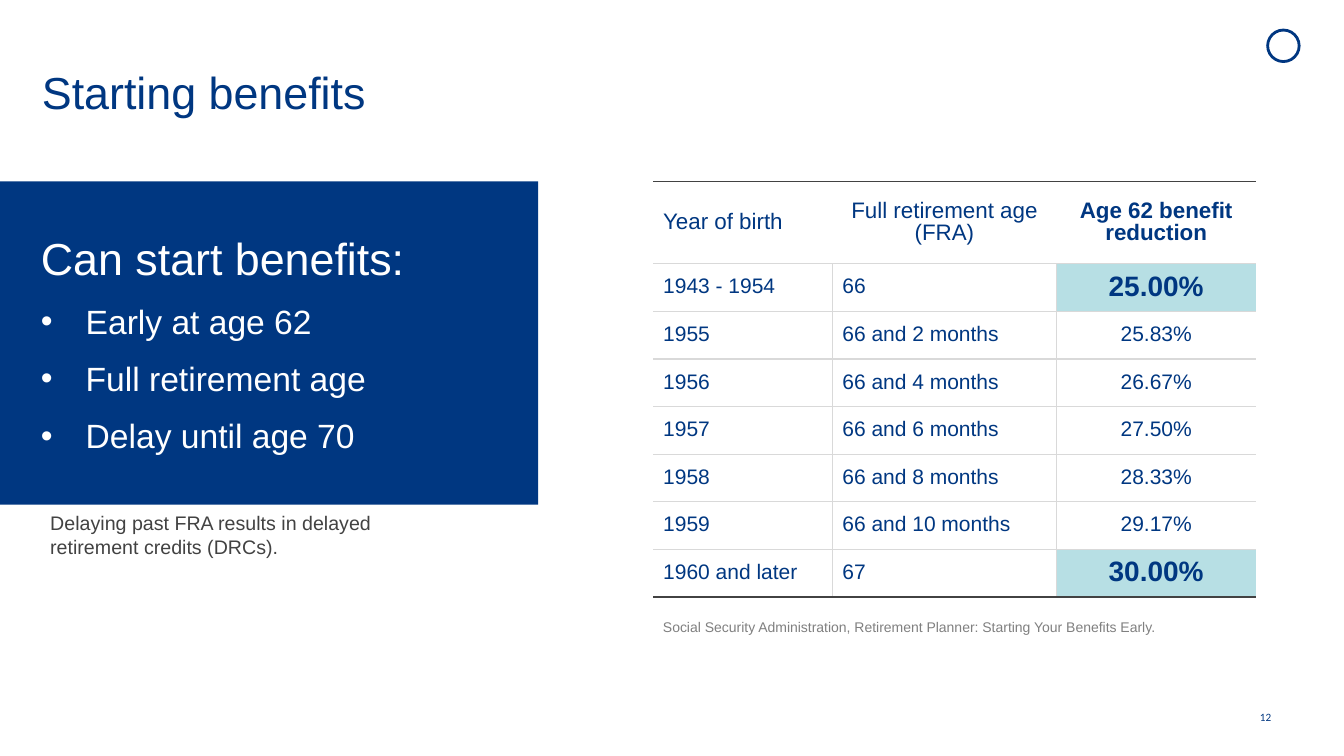
from pptx import Presentation
from pptx.dml.color import RGBColor as Rgb
from pptx.enum.shapes import MSO_SHAPE as Kind
from pptx.enum.text import MSO_ANCHOR as Anchor, MSO_AUTO_SIZE as Auto, PP_ALIGN as Align
from pptx.oxml.ns import qn
from pptx.util import Pt
from lxml.etree import SubElement as Sub

HUES = {"navy": "003781", "teal": "B7DFE4", "white": "FFFFFF",
        "rule": "D9D9D9", "dark": "424242", "gray": "808080"}
ROWS = [
    ("Year of birth", "Full retirement age (FRA)", "Age 62 benefit reduction"),
    ("1943 - 1954", "66", "25.00%"),
    ("1955", "66 and 2 months", "25.83%"),
    ("1956", "66 and 4 months", "26.67%"),
    ("1957", "66 and 6 months", "27.50%"),
    ("1958", "66 and 8 months", "28.33%"),
    ("1959", "66 and 10 months", "29.17%"),
    ("1960 and later", "67", "30.00%"),
]
LAST = len(ROWS) - 1
ITEMS = ["Can start benefits:", "Early at age 62", "Full retirement age", "Delay until age 70"]


class Deck:
    def __init__(self):
        self.prs = Presentation()
        self.prs.slide_width, self.prs.slide_height = Pt(960), Pt(540)
        self.slide = self.prs.slides.add_slide(self.prs.slide_layouts[1])
        self.shapes = self.slide.shapes

    def hue(self, name):
        return Rgb.from_string(HUES[name])

    def style(self, par, size, hue, bold=False, font="Arial"):
        for run in par.runs:
            run.font.size, run.font.bold, run.font.name = Pt(size), bold, font
            run.font.color.rgb = self.hue(hue)

    def place(self, shape, box):
        shape.left, shape.top, shape.width, shape.height = map(Pt, box)

    def inset(self, frame, side, edge):
        frame.margin_left = frame.margin_right = Pt(side)
        frame.margin_top = frame.margin_bottom = Pt(edge)

    def title(self, text, box):
        shape = self.shapes.title
        self.place(shape, box)
        frame = shape.text_frame
        frame.text = text
        frame.auto_size, frame.vertical_anchor = Auto.NONE, Anchor.BOTTOM
        self.inset(frame, 0, 0)
        par = frame.paragraphs[0]
        par.alignment, par.line_spacing = Align.LEFT, 0.9
        self.style(par, 32, "navy")

    def panel(self, items, box):
        shape = self.slide.placeholders[1]
        self.place(shape, box)
        shape.fill.solid()
        shape.fill.fore_color.rgb = self.hue("navy")
        frame = shape.text_frame
        frame.text = "\n".join(items)
        frame.auto_size, frame.vertical_anchor = Auto.NONE, Anchor.MIDDLE
        for i, par in enumerate(frame.paragraphs):
            par.space_before = par.space_after = Pt(6)
            self.style(par, 24 if i else 32, "white")
            props = par._p.get_or_add_pPr()
            props.set("marL", str(Pt(54)))
            props.set("indent", str(Pt(-32)))
            if i:
                Sub(props, qn("a:buFont"), typeface="Arial")
                Sub(props, qn("a:buChar"), char="•")
            else:
                Sub(props, qn("a:buNone"))

    def note(self, text, box, size, hue, font="Arial", side=7.2, anchor=Anchor.TOP):
        shape = self.shapes.add_textbox(*map(Pt, box))
        frame = shape.text_frame
        frame.text, frame.word_wrap, frame.vertical_anchor = text, True, anchor
        self.inset(frame, side, 3.6)
        self.style(frame.paragraphs[0], size, hue, font=font)

    def ring(self, box):
        shape = self.shapes.add_shape(Kind.OVAL, *map(Pt, box))
        shape.shadow.inherit = False
        shape.fill.background()
        shape.line.color.rgb, shape.line.width = self.hue("navy"), Pt(2)

    def edge(self, cell, side, hue):
        line = Sub(cell._tc.get_or_add_tcPr(), qn("a:ln" + side), w=str(Pt(1)))
        if hue:
            fill = Sub(line, qn("a:solidFill"))
            Sub(fill, qn("a:srgbClr"), val=HUES[hue])
        else:
            Sub(line, qn("a:noFill"))

    def cell(self, cell, text, row, col):
        mark = col == 2 and row in (1, LAST)
        # Borders: dark outer rules, light inner grid below the header
        self.edge(cell, "L", "rule" if row and col else None)
        self.edge(cell, "R", "rule" if row and col < 2 else None)
        self.edge(cell, "T", "rule" if row else "dark")
        self.edge(cell, "B", "dark" if row == LAST else "rule")
        if mark:
            cell.fill.solid()
            cell.fill.fore_color.rgb = self.hue("teal")
        else:
            cell.fill.background()
        cell.vertical_anchor = Anchor.MIDDLE
        cell.text_frame.text = text
        par = cell.text_frame.paragraphs[0]
        par.line_spacing = 0.9
        if col == 2 or (row == 0 and col):
            par.alignment = Align.CENTER
        size = 20 if mark else 15 if row else 16
        self.style(par, size, "navy", mark or (row == 0 and col == 2))

    def table(self, rows, box, wide, head, high):
        grid = self.shapes.add_table(len(rows), len(wide), *map(Pt, box)).table
        grid.first_row = grid.horz_banding = False
        for col, width in zip(grid.columns, wide):
            col.width = Pt(width)
        for r, texts in enumerate(rows):
            grid.rows[r].height = Pt(high if r else head)
            for c, text in enumerate(texts):
                self.cell(grid.cell(r, c), text, r, c)


def main():
    deck = Deck()
    # Heading, emblem and page number
    deck.title("Starting benefits", (30, 21, 863, 64))
    deck.ring((905.5, 21.5, 22.5, 22.5))
    deck.note("12", (900, 498, 29, 29), 8, "navy", "Calibri", 0, Anchor.MIDDLE)
    # Options panel with its remark
    deck.panel(ITEMS, (0, 129.5, 384.5, 231))
    deck.note("Delaying past FRA results in delayed retirement credits (DRCs).",
              (28.8, 361.5, 306, 41), 14, "dark")
    # Reduction table with its source
    deck.table(ROWS, (466.5, 129.5, 430.5, 297), (128, 160.3, 142.2), 59, 34)
    deck.note("Social Security Administration, Retirement Planner: Starting Your Benefits Early.",
              (466.5, 438, 390, 19.5), 10, "gray")
    deck.prs.save("out.pptx")


if __name__ == "__main__":
    main()
